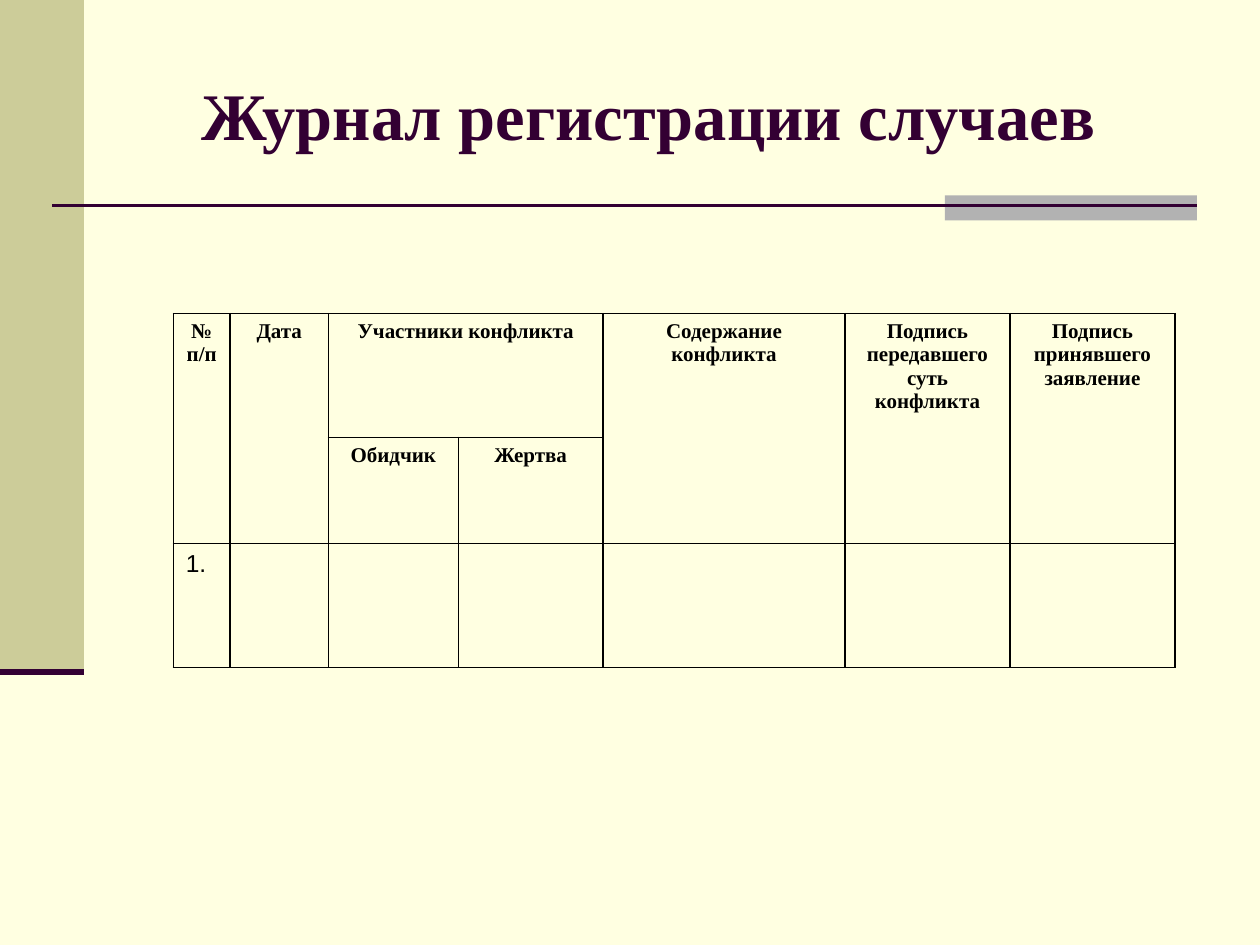
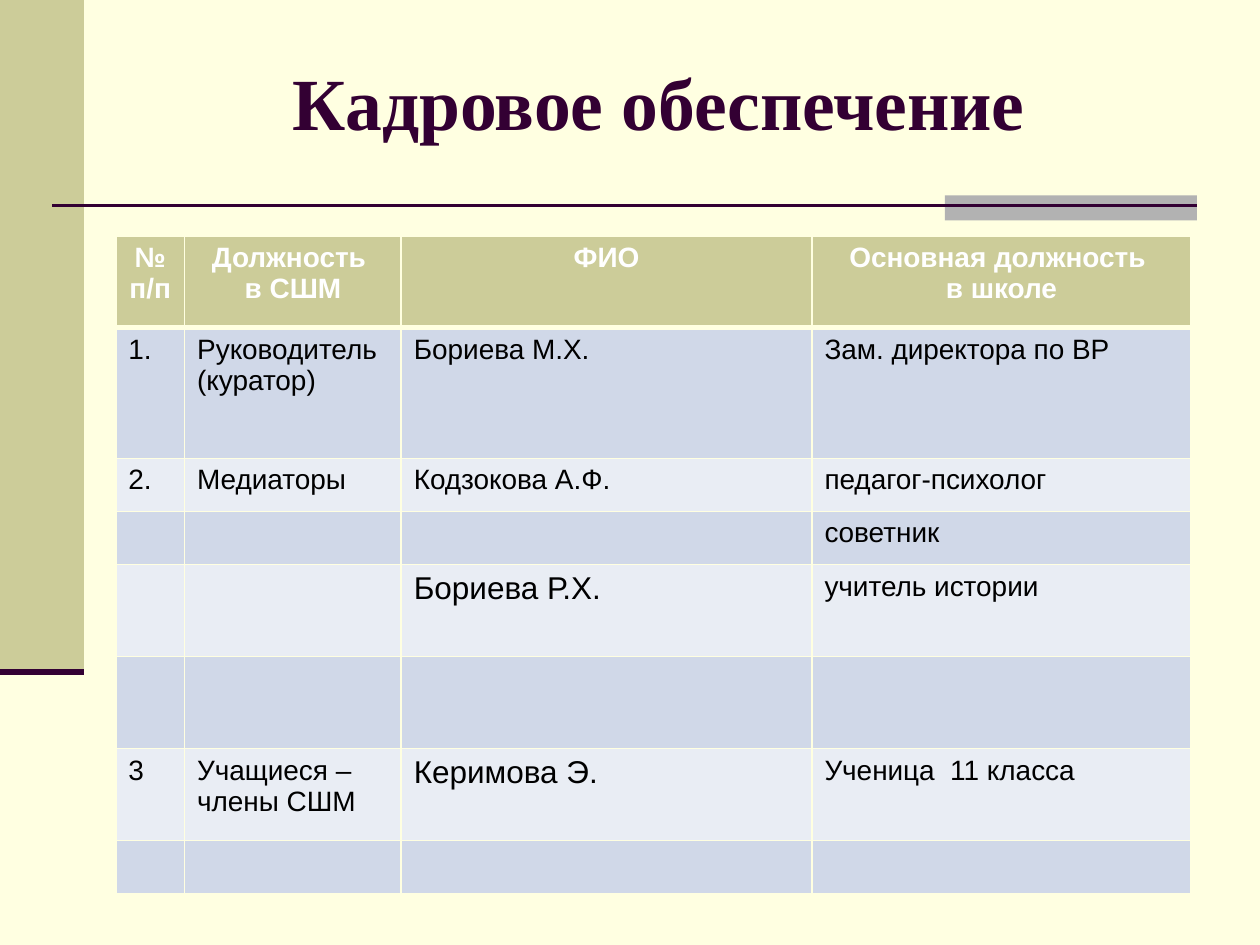
from lxml.etree import SubElement
from pptx import Presentation
from pptx.dml.color import RGBColor
from pptx.enum.shapes import MSO_CONNECTOR as Connector, MSO_SHAPE as Shape
from pptx.enum.text import MSO_ANCHOR as Anchor, MSO_AUTO_SIZE as AutoSize, PP_ALIGN as Align
from pptx.oxml import parse_xml
from pptx.oxml.ns import nsdecls, qn
from pptx.util import Pt

CREAM = RGBColor(0xFF, 0xFF, 0xE1)
OLIVE = RGBColor(0xCC, 0xCC, 0x99)
GREY = RGBColor(0xB2, 0xB2, 0xB2)
PLUM = RGBColor(0x33, 0x00, 0x33)
BLACK = RGBColor(0, 0, 0)
WHITE = RGBColor(0xFF, 0xFF, 0xFF)
BLUE = RGBColor(0xD0, 0xD8, 0xE8)
PALE = RGBColor(0xE9, 0xED, 0xF4)

TITLE = {"name": "Times New Roman", "bold": True, "color": PLUM}
JOURNAL_HEAD = {"name": "Times New Roman", "size": 12, "bold": True, "color": BLACK}
JOURNAL_BODY = {"name": "Arial", "size": 14, "bold": False, "color": BLACK}
STAFF_HEAD = {"name": "Arial", "size": 16, "bold": True, "color": WHITE}
STAFF_BODY = {"name": "Arial", "size": 16, "bold": False, "color": BLACK}
STAFF_LARGE = STAFF_BODY | {"size": 18}

JOURNAL_COLUMNS = [32.5, 56.2, 74.2, 82.8, 138.2, 94.3, 94.3]
JOURNAL_ROWS = [70.8, 60.6, 70.8]
JOURNAL_TEXT = [
    ["№ п/п", "Дата", "Участники конфликта", "", "Содержание конфликта",
     "Подпись передавшего суть конфликта", "Подпись принявшего заявление"],
    ["", "", "Обидчик", "Жертва", "", "", ""],
    ["1.", "", "", "", "", "", ""],
]
STAFF_COLUMNS = [39.3, 123.8, 234.7, 216.7]
STAFF_ROWS = [52.4, 74.7, 30.4, 30.4, 52.6, 52.6, 52.6, 30.4]
STAFF_TEXT = [
    ["№ п/п", "Должность \nв СШМ", "ФИО", "Основная должность \nв школе"],
    ["1.", "Руководитель\n(куратор)", "Бориева М.Х.", "Зам. директора по ВР"],
    ["2.", "Медиаторы", "Кодзокова А.Ф.", "педагог-психолог"],
    ["", "", "", "советник"],
    ["", "", "Бориева Р.Х.", "учитель истории"],
    ["", "", "", ""],
    ["3", "Учащиеся – члены СШМ", "Керимова Э.", "Ученица  11 класса"],
    ["", "", "", ""],
]
LARGE_NAMES = {"Бориева Р.Х.", "Керимова Э."}


def write(frame, text, style, align):
    """Fill a text frame, one paragraph per line, in one style."""
    frame.text = text
    for para in frame.paragraphs:
        para.alignment = align
        for span in para.runs:
            for key, value in style.items():
                if key == "color":
                    span.font.color.rgb = value
                else:
                    setattr(span.font, key, Pt(value) if key == "size" else value)


def add_block(page, box, color):
    """Add a plain filled rectangle."""
    block = page.shapes.add_shape(Shape.RECTANGLE, *map(Pt, box))
    block.shadow.inherit = False
    block.fill.solid()
    block.fill.fore_color.rgb = color
    block.line.fill.background()


def add_rule(page, left, right, y, width):
    """Add a horizontal plum line."""
    rule = page.shapes.add_connector(Connector.STRAIGHT, Pt(left), Pt(y), Pt(right), Pt(y))
    rule.line.color.rgb = PLUM
    rule.line.width = Pt(width)
    SubElement(rule._element.spPr, qn("a:effectLst"))


def add_frame(page):
    """Draw the side band, the grey tab and the rules."""
    add_block(page, (0, 0, 48, 384), OLIVE)
    add_block(page, (540, 111.6, 144, 14.4), GREY)
    add_rule(page, 30, 684, 117.5, 1.5)
    add_rule(page, 0, 48, 384, 3.5)


def add_page(deck, title, box, size):
    """Add a framed slide with its title."""
    page = deck.slides.add_slide(deck.slide_layouts[5])
    add_frame(page)
    heading = page.shapes.title
    for side, value in zip(("left", "top", "width", "height"), box):
        setattr(heading, side, Pt(value))
    frame = heading.text_frame
    frame.auto_size = AutoSize.NONE
    frame.word_wrap = True
    frame.vertical_anchor = Anchor.MIDDLE
    write(frame, title, TITLE | {"size": size}, Align.CENTER)
    return page


def set_borders(cell, color, **widths):
    """Give a cell four solid borders, 1 pt unless stated."""
    properties = cell._tc.get_or_add_tcPr()
    for index, side in enumerate("LRTB"):
        width = Pt(widths.get(side, 1))
        properties.insert(index, parse_xml(
            f'<a:ln{side} {nsdecls("a")} w="{width}"><a:solidFill>'
            f'<a:srgbClr val="{color}"/></a:solidFill></a:ln{side}>'))


def add_grid(page, left, top, columns, rows):
    """Add an unstyled table with the given column widths and row heights."""
    table = page.shapes.add_table(len(rows), len(columns), Pt(left), Pt(top),
                                  Pt(sum(columns)), Pt(sum(rows))).table
    table.first_row = table.horz_banding = False
    for column, width in zip(table.columns, columns):
        column.width = Pt(width)
    for row, height in zip(table.rows, rows):
        row.height = Pt(height)
    return table


def add_journal(page, left, top):
    """Add the case journal with its two-level header."""
    table = add_grid(page, left, top, JOURNAL_COLUMNS, JOURNAL_ROWS)
    for r, texts in enumerate(JOURNAL_TEXT):
        style, align = (JOURNAL_HEAD, Align.CENTER) if r < 2 else (JOURNAL_BODY, Align.LEFT)
        for c, text in enumerate(texts):
            cell = table.cell(r, c)
            cell.fill.background()
            set_borders(cell, BLACK)
            write(cell.text_frame, text, style, align)
    for c in (0, 1, 4, 5, 6):
        table.cell(0, c).merge(table.cell(1, c))
    table.cell(0, 2).merge(table.cell(0, 3))


def add_staff(page, left, top):
    """Add the staff table with a header and banded rows."""
    table = add_grid(page, left, top, STAFF_COLUMNS, STAFF_ROWS)
    for r, texts in enumerate(STAFF_TEXT):
        color = OLIVE if r == 0 else (PALE, BLUE)[r % 2]
        widths = {0: {"B": 3}, 1: {"T": 3}}.get(r, {})
        for c, text in enumerate(texts):
            cell = table.cell(r, c)
            cell.fill.solid()
            cell.fill.fore_color.rgb = color
            set_borders(cell, CREAM, **widths)
            body = STAFF_LARGE if text in LARGE_NAMES else STAFF_BODY
            style, align = (STAFF_HEAD, Align.CENTER) if r == 0 else (body, Align.LEFT)
            write(cell.text_frame, text, style, align)


def main():
    """Build both slides and save the deck."""
    deck = Presentation()
    deck.slide_width, deck.slide_height = Pt(720), Pt(540)
    background = deck.slide_master.background.fill
    background.solid()
    background.fore_color.rgb = CREAM
    add_journal(add_page(deck, "Журнал регистрации случаев", (64.8, 20.2, 612, 90), 38), 99, 179.2)
    add_staff(add_page(deck, "Кадровое обеспечение", (70.6, 20.2, 612, 75), 42), 66.2, 134.8)
    deck.save("out.pptx")


if __name__ == "__main__":
    main()
